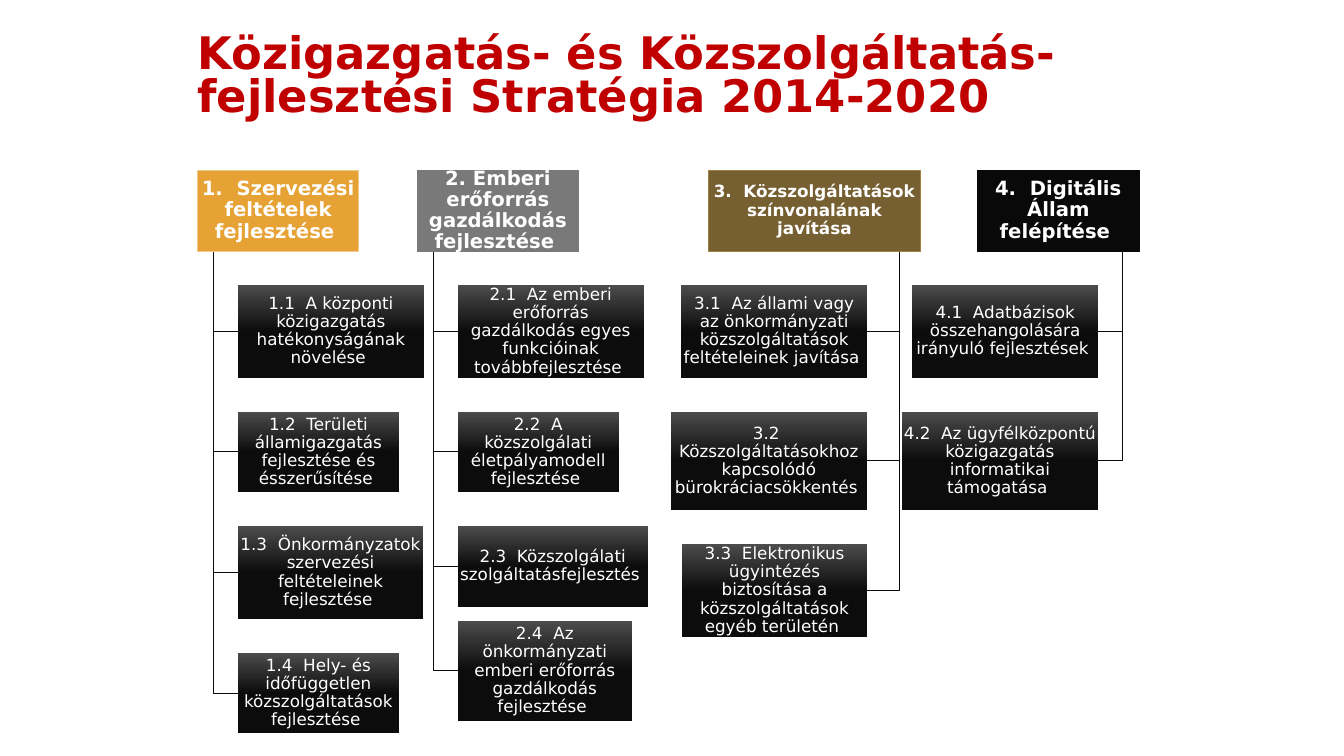
from copy import deepcopy
from dataclasses import dataclass

from pptx import Presentation
from pptx.dml.color import RGBColor
from pptx.enum.shapes import MSO_SHAPE
from pptx.enum.text import MSO_ANCHOR, PP_ALIGN
from pptx.oxml.ns import qn
from pptx.shapes.autoshape import Shape
from pptx.slide import Slide
from pptx.util import Pt

RECTANGLE = MSO_SHAPE.RECTANGLE
MIDDLE = MSO_ANCHOR.MIDDLE
CENTER = PP_ALIGN.CENTER

WHITE = RGBColor(0xFF, 0xFF, 0xFF)
RED = RGBColor(0xC0, 0x00, 0x00)
BRANCH = RGBColor(0x0A, 0x0A, 0x0A)
ORANGE = RGBColor(0xE7, 0xA2, 0x36)
PALE_ORANGE = RGBColor(0xF1, 0xC9, 0x8B)
GRAY = RGBColor(0x79, 0x79, 0x79)
BROWN = RGBColor(0x76, 0x60, 0x32)
PALE_BROWN = RGBColor(0x9E, 0x80, 0x42)
BLACK = RGBColor(0x09, 0x09, 0x09)
GOAL_GRADIENT = (
    (0.0, RGBColor(0x4C, 0x4C, 0x4C)),
    (0.5, RGBColor(0x0C, 0x0C, 0x0C)),
    (1.0, RGBColor(0x0B, 0x0B, 0x0B)),
)

FONT = "DejaVu Sans"
HEADER_TOP = 121.7
HEADER_HEIGHT = 57.6
GAP = 24.2
INSET = 0.7


@dataclass(frozen=True)
class Goal:
    text: str
    width: float
    height: float
    gap: float = GAP


@dataclass(frozen=True)
class Pillar:
    text: str
    left: float
    width: float
    size: float
    fill: RGBColor
    outline: RGBColor
    trunk: float
    goal_edge: float
    goals: tuple[Goal, ...]


PILLARS = (
    Pillar("1.  Szervezési feltételek fejlesztése ", 141.1, 115.2, 14, ORANGE, PALE_ORANGE, 152.6, 169.9, (
        Goal("1.1  A központi közigazgatás hatékonyságának növelése ", 133, 66.3),
        Goal("1.2  Területi államigazgatás fejlesztése és ésszerűsítése ", 115.2, 57.6),
        Goal("1.3  Önkormányzatok szervezési feltételeinek fejlesztése ", 132.5, 66.3),
        Goal("1.4  Hely- és időfüggetlen közszolgáltatások fejlesztése ", 115.2, 57.6),
    )),
    Pillar("2. Emberi erőforrás gazdálkodás fejlesztése ", 298.1, 115.2, 14, GRAY, GRAY, 309.6, 326.9, (
        Goal("2.1  Az emberi erőforrás gazdálkodás egyes funkcióinak továbbfejlesztése ", 133, 66.3),
        Goal("2.2  A közszolgálati életpályamodell fejlesztése ", 115.2, 57.6),
        Goal("2.3  Közszolgálati szolgáltatásfejlesztés ", 136, 57.6),
        Goal("2.4  Az önkormányzati emberi erőforrás gazdálkodás fejlesztése ", 124.6, 71.3, 10),
    )),
    Pillar("3.  Közszolgáltatások színvonalának javítása", 506.2, 151.2, 12, BROWN, PALE_BROWN, 642.3, 619.6, (
        Goal("3.1  Az állami vagy az önkormányzati közszolgáltatások feltételeinek javítása ", 133, 66.3),
        Goal("3.2  Közszolgáltatásokhoz kapcsolódó bürokráciacsökkentés ", 140.6, 70.4),
        Goal("3.3  Elektronikus ügyintézés biztosítása a közszolgáltatások egyéb területén ", 132.5, 66.3),
    )),
    Pillar("4.  Digitális Állam felépítése ", 698.4, 115.2, 14, BLACK, BLACK, 802, 784.6, (
        Goal("4.1  Adatbázisok összehangolására irányuló fejlesztések ", 133, 66.3),
        Goal("4.2  Az ügyfélközpontú közigazgatás informatikai támogatása ", 140.6, 70.4),
    )),
)


def add_title(page: Slide) -> None:
    box = page.shapes.add_textbox(Pt(133.9), Pt(0), Pt(673.2), Pt(111.6))
    frame = box.text_frame
    frame.word_wrap = True
    frame.vertical_anchor = MIDDLE
    para = frame.paragraphs[0]
    para.line_spacing = Pt(31)
    span = para.add_run()
    span.text = "Közigazgatás- és Közszolgáltatás-fejlesztési Stratégia 2014-2020"
    span.font.name = FONT
    span.font.size = Pt(32)
    span.font.bold = True
    span.font.color.rgb = RED


def add_box(page: Slide, left: float, top: float, width: float, height: float,
            text: str, size: float, bold: bool) -> Shape:
    box = page.shapes.add_shape(RECTANGLE, Pt(left), Pt(top), Pt(width), Pt(height))
    box.shadow.inherit = False
    frame = box.text_frame
    frame.word_wrap = True
    frame.vertical_anchor = MIDDLE
    frame.margin_left = frame.margin_right = Pt(INSET)
    frame.margin_top = frame.margin_bottom = Pt(INSET)
    para = frame.paragraphs[0]
    para.alignment = CENTER
    para.line_spacing = 0.9
    span = para.add_run()
    span.text = text
    span.font.name = FONT
    span.font.size = Pt(size)
    span.font.bold = bold
    span.font.color.rgb = WHITE
    return box


def add_header(page: Slide, pillar: Pillar) -> None:
    box = add_box(page, pillar.left, HEADER_TOP, pillar.width, HEADER_HEIGHT,
                  pillar.text, pillar.size, True)
    box.fill.solid()
    box.fill.fore_color.rgb = pillar.fill
    box.line.color.rgb = pillar.outline
    box.line.width = Pt(0.5)


def add_goal(page: Slide, pillar: Pillar, goal: Goal, top: float) -> None:
    grows_right = pillar.trunk < pillar.goal_edge
    left = pillar.goal_edge if grows_right else pillar.goal_edge - goal.width
    box = add_box(page, left, top, goal.width, goal.height, goal.text, 12, False)
    box.line.fill.background()
    box.fill.gradient()
    box.fill.gradient_angle = 270
    stop_list = next(box.element.iter(qn("a:gsLst")))
    stop_list.insert(1, deepcopy(stop_list[0]))
    for stop, (position, color) in zip(box.fill.gradient_stops, GOAL_GRADIENT):
        stop.position = position
        stop.color.rgb = color


def add_branch(page: Slide, pillar: Pillar, middle: float) -> None:
    trunk = Pt(pillar.trunk)
    builder = page.shapes.build_freeform(trunk, Pt(HEADER_TOP + HEADER_HEIGHT))
    builder.add_line_segments([(trunk, Pt(middle)), (Pt(pillar.goal_edge), Pt(middle))], close=False)
    branch = builder.convert_to_shape()
    branch.shadow.inherit = False
    branch.fill.background()
    branch.line.color.rgb = BRANCH
    branch.line.width = Pt(0.5)


def add_pillar(page: Slide, pillar: Pillar) -> None:
    bottom = HEADER_TOP + HEADER_HEIGHT
    for goal in pillar.goals:
        top = bottom + goal.gap
        add_branch(page, pillar, top + goal.height / 2)
        add_goal(page, pillar, goal, top)
        bottom = top + goal.height
    add_header(page, pillar)


def main() -> None:
    deck = Presentation()
    deck.slide_width = Pt(960)
    deck.slide_height = Pt(540)
    page = deck.slides.add_slide(deck.slide_layouts[6])
    add_title(page)
    for pillar in PILLARS:
        add_pillar(page, pillar)
    deck.save("out.pptx")


if __name__ == "__main__":
    main()
